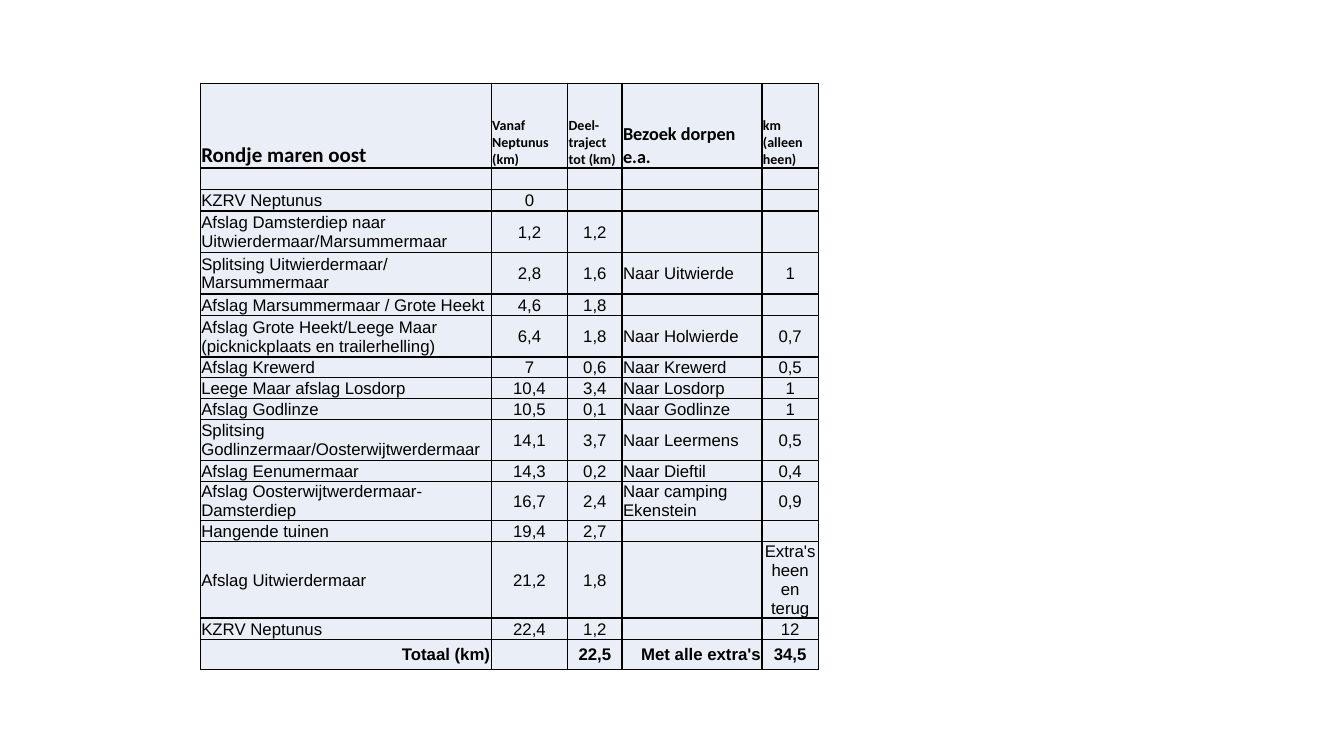
from lxml import etree
from pptx import Presentation
from pptx import util as u
from pptx.dml.color import RGBColor
from pptx.enum import text
from pptx.oxml import ns

COLORS = {"cell": "EAEFF7", "ink": "000000", "border": "000000"}
LEFT, CENTER, RIGHT = text.PP_ALIGN.LEFT, text.PP_ALIGN.CENTER, text.PP_ALIGN.RIGHT
BOTTOM, MIDDLE = text.MSO_ANCHOR.BOTTOM, text.MSO_ANCHOR.MIDDLE

COLUMN_SHARES = [2.89, 0.76, 0.54, 1.39, 0.56]
ROW_LINES = [4.08, 1, 1, 2, 2, 1, 2, 1, 1, 1, 2, 1, 1, 1, 2.77, 1, 1.46]
HEADER_SIZES = [15, 10, 10, 13, 10]
BODY_ALIGN = [LEFT, CENTER, CENTER, LEFT, CENTER]
TOTAL_ALIGN = [RIGHT, CENTER, CENTER, RIGHT, CENTER]

ROUTE = [
    ["Rondje maren oost", "Vanaf Neptunus (km)", "Deel- traject tot (km)",
     "Bezoek dorpen e.a.", "km (alleen heen)"],
    ["", "", "", "", ""],
    ["KZRV Neptunus", "0", "", "", ""],
    ["Afslag Damsterdiep naar Uitwierdermaar/Marsummermaar", "1,2", "1,2", "", ""],
    ["Splitsing Uitwierdermaar/ Marsummermaar", "2,8", "1,6", "Naar Uitwierde", "1"],
    ["Afslag Marsummermaar / Grote Heekt", "4,6", "1,8", "", ""],
    ["Afslag Grote Heekt/Leege Maar (picknickplaats en trailerhelling)",
     "6,4", "1,8", "Naar Holwierde", "0,7"],
    ["Afslag Krewerd", "7", "0,6", "Naar Krewerd", "0,5"],
    ["Leege Maar afslag Losdorp", "10,4", "3,4", "Naar Losdorp", "1"],
    ["Afslag Godlinze", "10,5", "0,1", "Naar Godlinze", "1"],
    ["Splitsing Godlinzermaar/Oosterwijtwerdermaar", "14,1", "3,7", "Naar Leermens", "0,5"],
    ["Afslag Eenumermaar", "14,3", "0,2", "Naar Dieftil", "0,4"],
    ["Afslag Oosterwijtwerdermaar-Damsterdiep", "16,7", "2,4", "Naar camping Ekenstein", "0,9"],
    ["Hangende tuinen", "19,4", "2,7", "", ""],
    ["Afslag Uitwierdermaar", "21,2", "1,8", "", "Extra's heen en terug"],
    ["KZRV Neptunus", "22,4", "1,2", "", "12"],
    ["Totaal (km)", "", "22,5", "Met alle extra's", "34,5"],
]


def apply(target, values):
    for name, value in values.items():
        setattr(target, name, value)


def add_borders(cell):
    properties = cell._tc.get_or_add_tcPr()
    for position, side in enumerate(("lnL", "lnR", "lnT", "lnB")):
        line = etree.Element(ns.qn("a:" + side), w=str(u.Pt(1)))
        fill = etree.SubElement(line, ns.qn("a:solidFill"))
        etree.SubElement(fill, ns.qn("a:srgbClr"), val=COLORS["border"])
        properties.insert(position, line)


def fill_cell(cell, words, align, anchor, font):
    apply(cell, {"margin_left": u.Inches(0.01), "margin_right": u.Inches(0.01),
                 "margin_top": u.Inches(0.01), "margin_bottom": 0,
                 "vertical_anchor": anchor})
    cell.fill.solid()
    cell.fill.fore_color.rgb = RGBColor.from_string(COLORS["cell"])
    add_borders(cell)
    paragraph = cell.text_frame.paragraphs[0]
    paragraph.alignment = align
    if words:
        run = paragraph.add_run()
        run.text = words
        apply(run.font, font)
        run.font.color.rgb = RGBColor.from_string(COLORS["ink"])
    else:
        etree.SubElement(paragraph._p, ns.qn("a:endParaRPr"), sz=str(int(font["size"].pt * 100)))


def add_route_table(slide, left, top, width, height):
    table = slide.shapes.add_table(len(ROUTE), len(COLUMN_SHARES), left, top, width, height).table
    apply(table, {"first_row": False, "horz_banding": False})
    for column, share in zip(table.columns, COLUMN_SHARES):
        column.width = int(width * share / sum(COLUMN_SHARES))
    for row, lines in zip(table.rows, ROW_LINES):
        row.height = int(height * lines / sum(ROW_LINES))
    last = len(ROUTE) - 1
    for r, stage in enumerate(ROUTE):
        for c, words in enumerate(stage):
            if r == 0:
                font = {"name": "Calibri", "size": u.Pt(HEADER_SIZES[c]), "bold": True}
                fill_cell(table.cell(r, c), words, LEFT, BOTTOM, font)
            else:
                font = {"name": "Arial", "size": u.Pt(12), "bold": r == last}
                align = TOTAL_ALIGN[c] if r == last else BODY_ALIGN[c]
                fill_cell(table.cell(r, c), words, align, MIDDLE, font)


def main():
    deck = Presentation()
    apply(deck, {"slide_width": u.Inches(13.33), "slide_height": u.Inches(7.5)})
    slide = deck.slides.add_slide(deck.slide_layouts[6])
    wide, high = deck.slide_width, deck.slide_height
    add_route_table(slide, int(wide * 0.149), int(high * 0.11), int(wide * 0.46), int(high * 0.723))
    deck.save("out.pptx")


if __name__ == "__main__":
    main()
